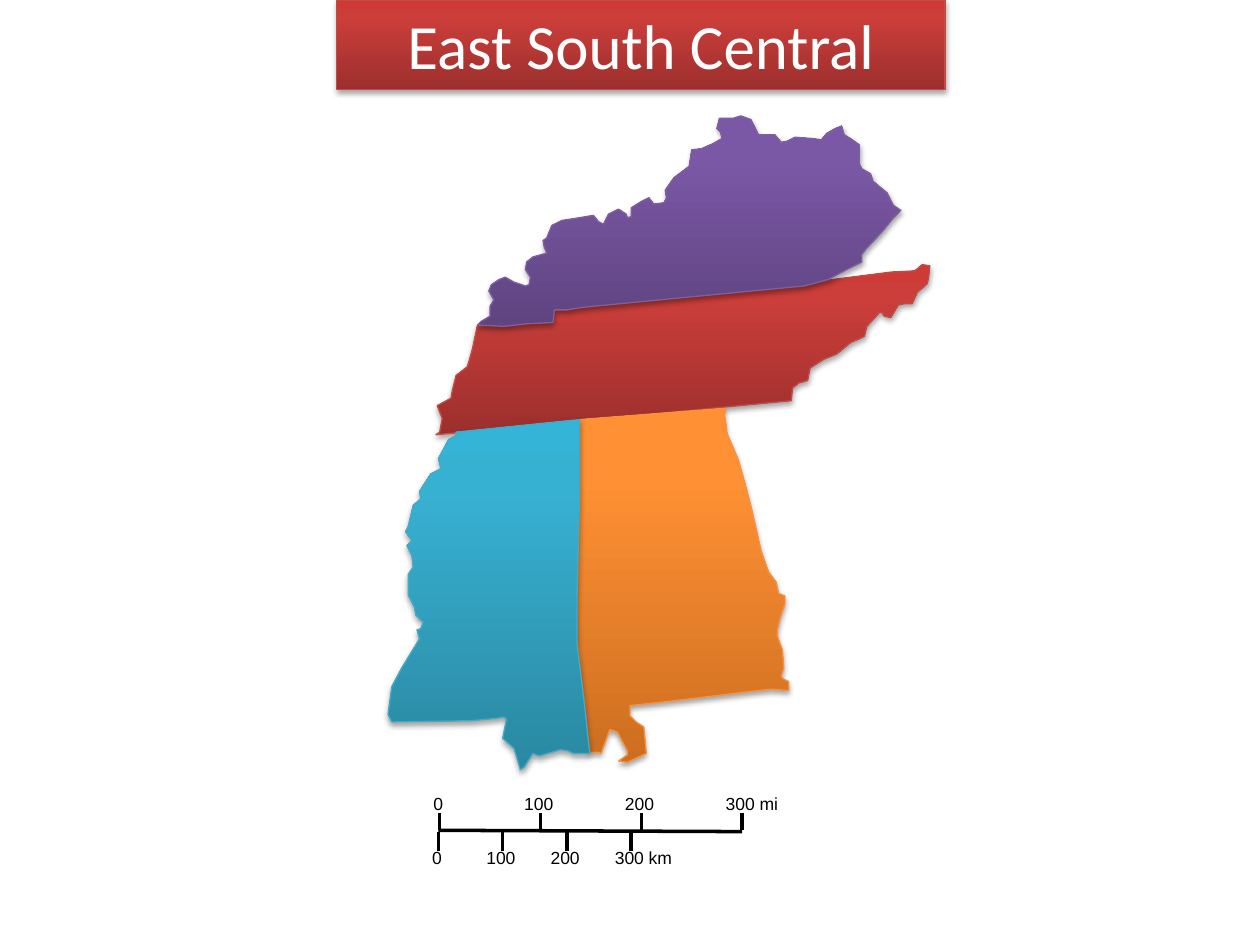
from dataclasses import dataclass

from lxml.etree import SubElement
from pptx import Presentation
from pptx.dml.color import RGBColor as Rgb
from pptx.enum.shapes import MSO_CONNECTOR as Connector
from pptx.enum.text import MSO_ANCHOR as Anchor, MSO_AUTO_SIZE as AutoSize, PP_ALIGN as Align
from pptx.oxml import parse_xml
from pptx.oxml.ns import nsdecls, qn
from pptx.util import Inches, Pt

COLUMNS, ROWS = 1000, 750  # grid laid over the slide


@dataclass(frozen=True)
class Tone:
    bottom: str
    middle: str
    top: str
    edge: str


@dataclass(frozen=True)
class Theme:
    red: Tone = Tone("9C2F2D", "CB3E3A", "CE3B37", "BF4C48")
    purple: Tone = Tone("5F4480", "7B58A6", "7C57A8", "7D60A0")
    orange: Tone = Tone("CC6E20", "FF9034", "FF9136", "F69240")
    blue: Tone = Tone("2A88A2", "37B1D2", "34B4D6", "46AAC5")
    ink: str = "000000"
    paper: str = "FFFFFF"
    title_font: str = "Calibri"
    label_font: str = "Arial"
    title_size: int = 36
    label_size: int = 10
    edge_width: float = 0.75


def write(frame, text, *, font, size, color, align=Align.LEFT):
    paragraph = frame.paragraphs[0]
    paragraph.alignment = align
    run = paragraph.add_run()
    run.text = text
    run.font.name = font
    run.font.size = Pt(size)
    run.font.color.rgb = Rgb.from_string(color)


class MapSlide:
    def __init__(self, deck, theme):
        self.theme = theme
        self.cell = deck.slide_width // COLUMNS
        self.slide = deck.slides.add_slide(deck.slide_layouts[5])
        self.shapes = self.slide.shapes

    def cells(self, *counts):
        return [round(count * self.cell) for count in counts]

    def dress(self, shape, tone):
        """Give a shape its edge, vertical gradient and soft shadow."""
        shape.line.color.rgb = Rgb.from_string(tone.edge)
        shape.line.width = Pt(self.theme.edge_width)
        stops = "".join(
            f'<a:gs pos="{share * 1000}"><a:srgbClr val="{color}"/></a:gs>'
            for share, color in ((0, tone.bottom), (80, tone.middle), (100, tone.top)))
        properties = shape._element.spPr
        properties.find(qn("a:ln")).addprevious(parse_xml(
            f'<a:gradFill {nsdecls("a")} rotWithShape="1"><a:gsLst>{stops}</a:gsLst>'
            '<a:lin ang="16200000" scaled="0"/></a:gradFill>'))
        properties.append(parse_xml(
            f'<a:effectLst {nsdecls("a")}><a:outerShdw blurRad="40000" dist="23000" '
            f'dir="5400000" rotWithShape="0"><a:srgbClr val="{self.theme.ink}">'
            '<a:alpha val="35000"/></a:srgbClr></a:outerShdw></a:effectLst>'))

    def title(self, text, box, tone):
        banner = self.shapes.title
        banner.left, banner.top, banner.width, banner.height = self.cells(*box)
        self.dress(banner, tone)
        frame = banner.text_frame
        frame.auto_size = AutoSize.NONE
        frame.vertical_anchor = Anchor.MIDDLE
        write(frame, text, font=self.theme.title_font, size=self.theme.title_size,
              color=self.theme.paper, align=Align.CENTER)

    def state(self, outline, tone):
        start, *rest = outline
        builder = self.shapes.build_freeform(*start, scale=self.cell)
        builder.add_line_segments(rest, close=True)
        self.dress(builder.convert_to_shape(), tone)

    def rule(self, x1, y1, x2, y2):
        line = self.shapes.add_connector(Connector.STRAIGHT, *self.cells(x1, y1, x2, y2))
        line.line.color.rgb = Rgb.from_string(self.theme.ink)
        line.line.width = Pt(0)
        SubElement(line._element.spPr, qn("a:effectLst"))

    def label(self, text, x, y):
        width = 8.4 * (len(text) + 1)
        frame = self.shapes.add_textbox(*self.cells(x, y, width, 17)).text_frame
        frame.margin_left = frame.margin_right = frame.margin_top = frame.margin_bottom = 0
        frame.word_wrap = False
        frame.auto_size = AutoSize.SHAPE_TO_FIT_TEXT
        write(frame, text, font=self.theme.label_font, size=self.theme.label_size,
              color=self.theme.ink)

    def scale(self, unit, start, step, tick_top, tick_bottom, label_top):
        for i in range(4):
            x = start + i * step
            self.rule(x, tick_top, x, tick_bottom)
            text = f"{i * 100} {unit}" if i == 3 else str(i * 100)
            self.label(text, x - (13 if i else 5), label_top)


# Borders shared by two states, in grid cells
KENTUCKY_TENNESSEE = [
    (638, 227), (503, 240), (462, 244), (450, 246), (440, 246), (439, 256),
    (418, 257), (400, 259), (379, 258)]
MISSISSIPPI_ALABAMA = [
    (460, 333), (460, 350), (460, 394), (458, 474), (458, 511), (464, 560), (468, 597)]

# State outlines
TENNESSEE = KENTUCKY_TENNESSEE + [
    (375, 277), (371, 291), (362, 298), (359, 310), (358, 316), (347, 322), (351, 332),
    (349, 343), (346, 345), (628, 318), (629, 308), (634, 304), (641, 302), (643, 292),
    (654, 285), (664, 281), (675, 272), (686, 267), (688, 259), (698, 248), (700, 248),
    (702, 251), (707, 252), (713, 242), (718, 241), (724, 241), (728, 232), (736, 225),
    (737, 220), (738, 211), (732, 210), (726, 215), (707, 216), (660, 222)]
KENTUCKY = KENTUCKY_TENNESSEE + [
    (382, 255), (389, 251), (389, 243), (392, 238), (388, 231), (390, 226), (396, 222),
    (401, 220), (408, 224), (417, 227), (420, 226), (421, 220), (417, 214), (418, 208),
    (423, 204), (430, 202), (434, 201), (432, 196), (431, 191), (434, 189), (438, 179),
    (446, 175), (459, 173), (471, 171), (475, 176), (479, 178), (483, 170), (491, 166),
    (497, 170), (498, 173), (501, 172), (501, 165), (509, 160), (515, 157), (519, 162),
    (527, 161), (529, 157), (528, 151), (535, 141), (547, 132), (549, 119), (557, 118),
    (566, 114), (573, 110), (572, 105), (569, 102), (571, 94), (582, 94), (588, 92),
    (596, 95), (602, 107), (615, 107), (620, 113), (625, 112), (631, 109), (645, 110),
    (652, 111), (656, 106), (663, 102), (668, 100), (670, 107), (675, 110), (682, 115),
    (682, 130), (684, 134), (691, 138), (693, 144), (704, 153), (709, 163), (715, 167),
    (709, 173), (700, 184), (687, 198), (684, 202), (684, 208), (672, 214), (657, 222)]
ALABAMA = MISSISSIPPI_ALABAMA[::-1] + [
    (576, 324), (575, 330), (576, 335), (577, 344), (586, 365), (593, 390), (597, 406),
    (600, 419), (604, 437), (610, 454), (616, 462), (618, 471), (623, 473), (623, 479),
    (619, 491), (617, 500), (617, 505), (621, 516), (622, 530), (620, 537), (622, 539),
    (626, 541), (626, 548), (612, 547), (594, 549), (528, 557), (500, 560), (500, 568),
    (505, 573), (511, 577), (513, 598), (498, 605), (491, 604), (498, 599), (498, 596),
    (490, 581), (484, 579), (480, 590), (477, 598), (475, 597)]
MISSISSIPPI = MISSISSIPPI_ALABAMA + [
    (468, 598), (455, 598), (451, 596), (445, 595), (428, 600), (423, 598), (416, 609),
    (413, 611), (411, 604), (408, 594), (399, 586), (402, 571), (400, 569), (395, 570),
    (374, 572), (311, 573), (308, 567), (311, 545), (319, 530), (333, 507), (331, 500),
    (334, 499), (336, 494), (330, 488), (329, 482), (324, 472), (324, 456), (328, 450),
    (327, 441), (323, 433), (327, 429), (322, 422), (324, 418), (328, 401), (334, 396),
    (333, 390), (342, 376), (350, 372), (349, 368), (348, 364), (356, 349), (362, 346),
    (362, 343)]


def main():
    deck = Presentation()
    deck.slide_width, deck.slide_height = Inches(10), Inches(7.5)
    theme = Theme()
    region = MapSlide(deck, theme)

    region.title("East South Central", (267, 0, 483, 71), theme.red)

    # States, from back to front
    for outline, tone in ((TENNESSEE, theme.red), (KENTUCKY, theme.purple),
                          (ALABAMA, theme.orange), (MISSISSIPPI, theme.blue)):
        region.state(outline, tone)

    # Distance scale: miles above the baseline, kilometres below
    region.rule(348, 659, 589, 660)
    region.scale("mi", 349, 80, 645, 659, 629)
    region.scale("km", 348, 51, 660, 675, 672)

    deck.save("out.pptx")


if __name__ == "__main__":
    main()
